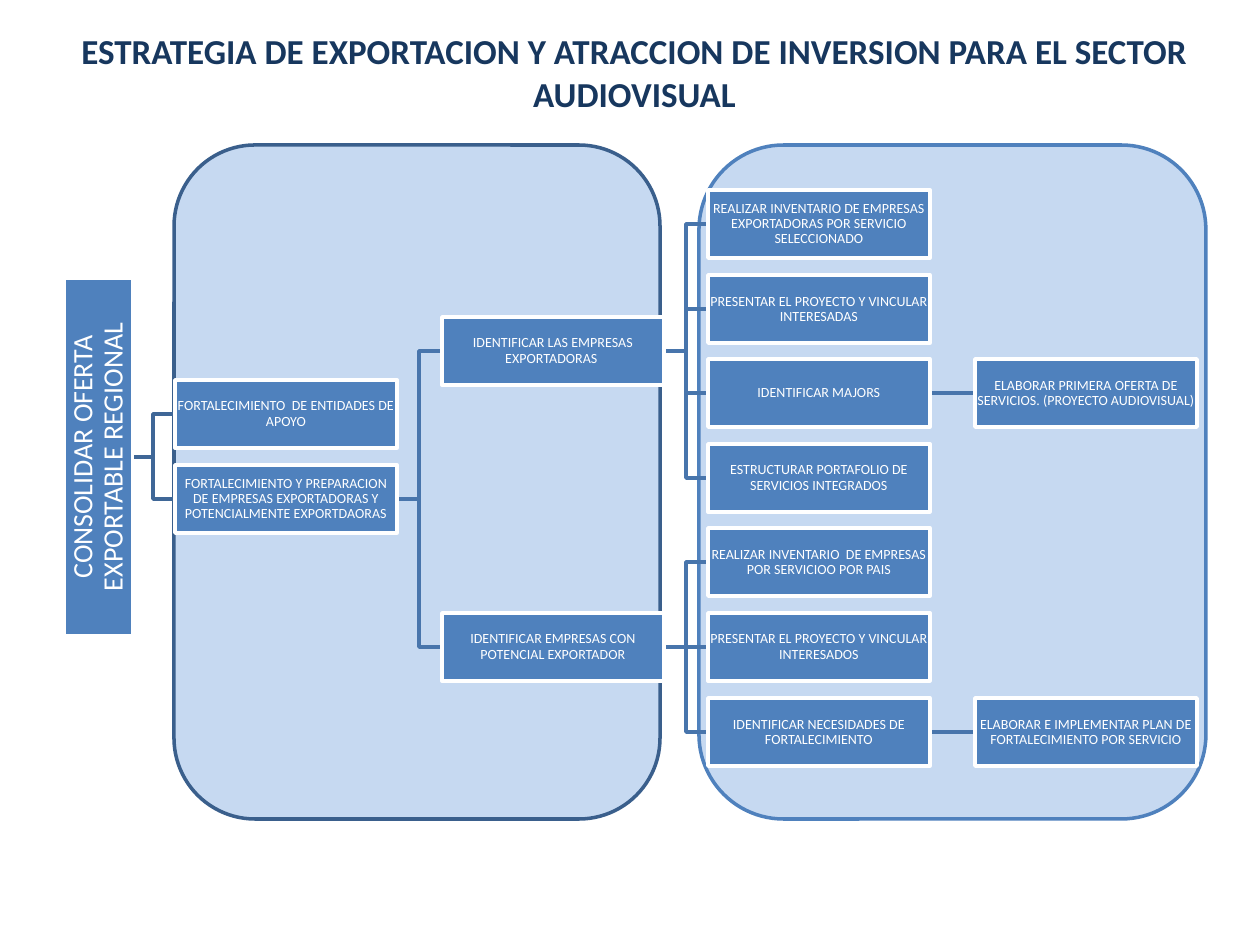
from pptx import Presentation
from pptx.dml.color import RGBColor
from pptx.enum.shapes import MSO_CONNECTOR as Conn, MSO_SHAPE as Kind
from pptx.enum.text import MSO_ANCHOR as Anchor, MSO_AUTO_SIZE as Fit, PP_ALIGN as Align
from pptx.util import Pt
from lxml.etree import SubElement

PX = 914400 / 126
NS = "{http://schemas.openxmlformats.org/drawingml/2006/main}"
BOX_W, BOX_H = 222, 68
ROOT_X, ROOT_W, ROOT_Y = 98, 357, 457

# Each box: text, column, row, children
TREE = [
    ("FORTALECIMIENTO  DE ENTIDADES DE APOYO", 0, 2.25, []),
    ("FORTALECIMIENTO Y PREPARACION DE EMPRESAS EXPORTADORAS Y "
     "POTENCIALMENTE EXPORTDAORAS", 0, 3.25, [
        ("IDENTIFICAR LAS EMPRESAS EXPORTADORAS ", 1, 1.5, [
            ("REALIZAR INVENTARIO DE EMPRESAS EXPORTADORAS POR SERVICIO "
             "SELECCIONADO", 2, 0, []),
            ("PRESENTAR EL PROYECTO Y VINCULAR INTERESADAS", 2, 1, []),
            ("IDENTIFICAR MAJORS", 2, 2, [
                ("ELABORAR PRIMERA OFERTA DE SERVICIOS. "
                 "(PROYECTO AUDIOVISUAL)", 3, 2, [])]),
            ("ESTRUCTURAR PORTAFOLIO DE SERVICIOS INTEGRADOS", 2, 3, [])]),
        ("IDENTIFICAR EMPRESAS CON POTENCIAL EXPORTADOR", 1, 5, [
            ("REALIZAR INVENTARIO  DE EMPRESAS POR SERVICIOO POR PAIS", 2, 4, []),
            ("PRESENTAR EL PROYECTO Y VINCULAR INTERESADOS", 2, 5, []),
            ("IDENTIFICAR NECESIDADES DE FORTALECIMIENTO", 2, 6, [
                ("ELABORAR E IMPLEMENTAR PLAN DE FORTALECIMIENTO "
                 "POR SERVICIO", 3, 6, [])])])]),
]


def emu(*vals):
    return [round(v * PX) for v in vals]


def hue(code):
    return RGBColor.from_string(code)


def spot(col, row):
    """Left edge and middle height of a box."""
    return round(175 + col * 800 / 3), round(224 + row * 84.6)


class Deck:
    font = "Calibri"
    pad = 1

    def __init__(self):
        self.prs = Presentation()
        self.prs.slide_width, self.prs.slide_height = emu(1260, 945)
        self.slide = self.prs.slides.add_slide(self.prs.slide_layouts[5])
        self.shapes = self.slide.shapes

    def label(self, shape, text, size, ink, bold=False, gap=1.0):
        frame = shape.text_frame
        frame.text = text
        look = {"word_wrap": True, "auto_size": Fit.NONE,
                "vertical_anchor": Anchor.MIDDLE}
        for key, val in look.items():
            setattr(frame, key, val)
        para = frame.paragraphs[0]
        para.alignment, para.line_spacing = Align.CENTER, gap
        look = {"name": self.font, "size": Pt(size), "bold": bold}
        font = para.runs[0].font
        for key, val in look.items():
            setattr(font, key, val)
        font.color.rgb = hue(ink)

    def title(self, text, *area):
        head = self.shapes.title
        for key, val in zip(("left", "top", "width", "height"), emu(*area)):
            setattr(head, key, val)
        self.label(head, text, 20, "17375E", True)

    def stroke(self, shape, ink):
        shape.line.color.rgb = hue(ink)
        shape.line.width = Pt(2)

    def shape(self, kind, area, fill, ink):
        item = self.shapes.add_shape(kind, *emu(*area))
        item.shadow.inherit = False
        item.fill.solid()
        item.fill.fore_color.rgb = hue(fill)
        self.stroke(item, ink)
        return item

    def box(self, text, area, size=8, turn=0):
        item = self.shape(Kind.RECTANGLE, area, "4F81BD", "FFFFFF")
        item.rotation = turn
        for side in ("left", "top", "right", "bottom"):
            setattr(item.text_frame, "margin_" + side, emu(self.pad)[0])
        self.label(item, text, size, "FFFFFF", gap=0.9)

    def link(self, x, y, x2, y2, ink):
        if y == y2:
            item = self.shapes.add_connector(Conn.STRAIGHT, *emu(x, y, x2, y2))
            SubElement(item._element.spPr, NS + "effectLst")
        else:
            mid = (x + x2) // 2
            pen = self.shapes.build_freeform(x, y, scale=PX)
            pen.add_line_segments([(mid, y), (mid, y2), (x2, y2)], close=False)
            item = pen.convert_to_shape()
            item.shadow.inherit = False
            item.fill.background()
        self.stroke(item, ink)

    def links(self, x, y, kids, ink="4875AC"):
        for _, col, row, subs in kids:
            left, mid = spot(col, row)
            self.link(x, y, left, mid, ink)
            self.links(left + BOX_W, mid, subs)

    def boxes(self, kids):
        for text, col, row, subs in kids:
            left, mid = spot(col, row)
            self.box(text, (left, mid - BOX_H // 2, BOX_W, BOX_H))
            self.boxes(subs)


def main():
    deck = Deck()
    # Title and background panels
    deck.title("ESTRATEGIA DE EXPORTACION Y ATRACCION DE INVERSION "
               "PARA EL SECTOR AUDIOVISUAL", 63, 58, 1143, 28)
    for left, wide, ink in ((174, 486, "3A5F8C"), (699, 507, "4F81BD")):
        deck.shape(Kind.ROUNDED_RECTANGLE, (left, 145, wide, 674), "C6D9F1", ink)
    # Links lie under the boxes
    deck.links(ROOT_X + BOX_H // 2, ROOT_Y, TREE, "3F6797")
    # Root box, turned upright, then the rest
    deck.box("CONSOLIDAR OFERTA EXPORTABLE REGIONAL",
             (ROOT_X - ROOT_W // 2, ROOT_Y - BOX_H // 2, ROOT_W, BOX_H), 16, 270)
    deck.boxes(TREE)
    deck.prs.save("out.pptx")


if __name__ == "__main__":
    main()
